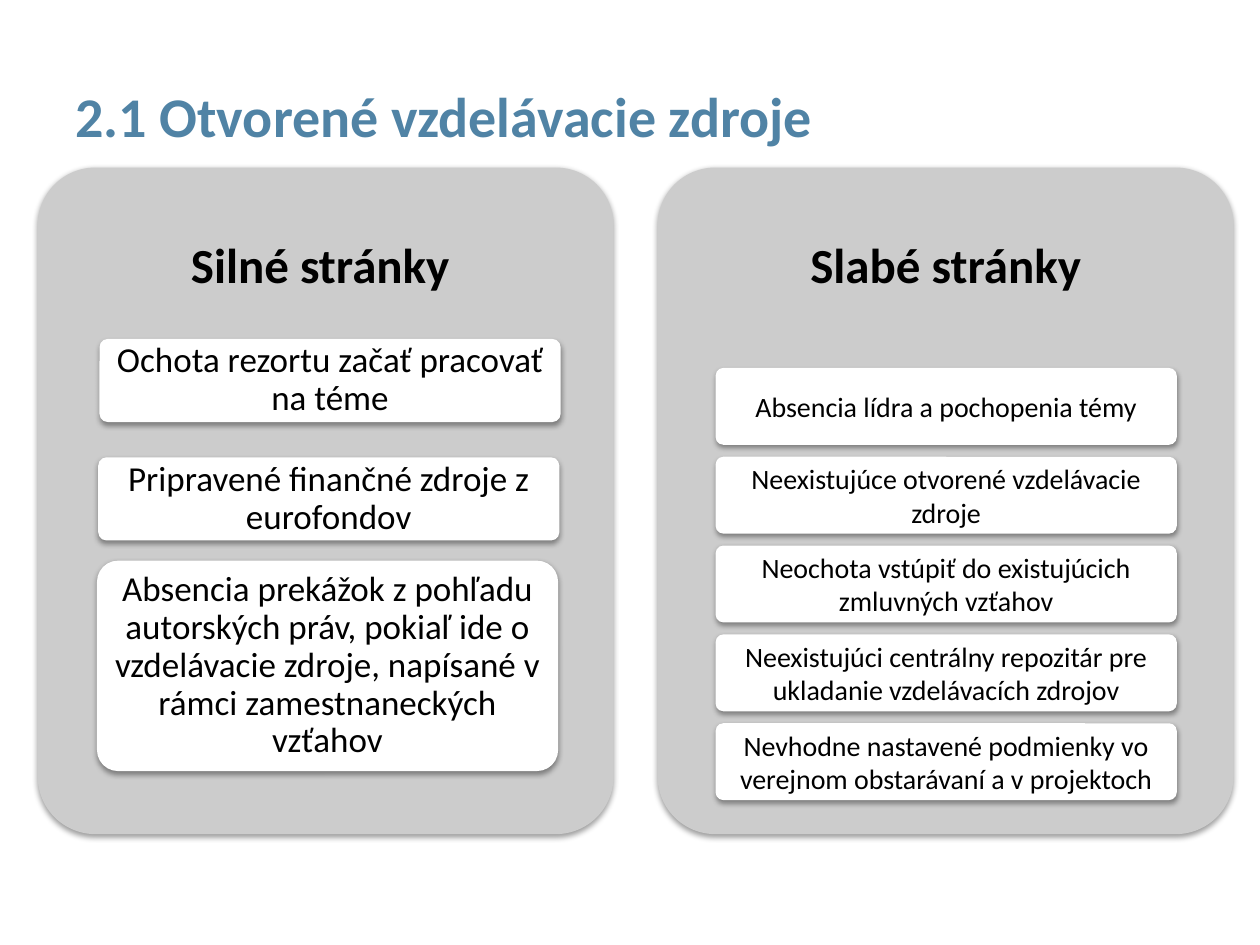
import pptx
import pptx.util
import pptx.dml.color
import pptx.enum.shapes
import pptx.enum.text
import pptx.oxml.ns
import lxml.etree

Inches = pptx.util.Inches
Pt = pptx.util.Pt
RGBColor = pptx.dml.color.RGBColor
ALIGN = pptx.enum.text.PP_ALIGN

BLUE = RGBColor(0x50, 0x83, 0xA5)
GRAY = RGBColor(0xCC, 0xCC, 0xCC)
WHITE = RGBColor(0xFF, 0xFF, 0xFF)
BLACK = RGBColor(0x00, 0x00, 0x00)

PANEL_TOP, PANEL_WIDTH, PANEL_HEIGHT = 1.33, 4.57, 5.29
HEADING_HEIGHT = 1.59
CARD_WIDTH = 3.66

STRENGTHS = [
    (0.49, 1.36, 0.66, "Ochota rezortu začať pracovať na téme"),
    (0.48, 2.30, 0.66, "Pripravené finančné zdroje z eurofondov"),
    (0.47, 3.12, 1.67, "Absencia prekážok z pohľadu autorských práv, pokiaľ ide o "
     "vzdelávacie zdroje, napísané v rámci zamestnaneckých vzťahov"),
]
WEAKNESS_TEXTS = [
    "Absencia lídra a pochopenia témy",
    "Neexistujúce otvorené vzdelávacie zdroje",
    "Neochota vstúpiť do existujúcich zmluvných vzťahov",
    "Neexistujúci centrálny repozitár pre ukladanie vzdelávacích zdrojov",
    "Nevhodne nastavené podmienky vo verejnom obstarávaní a v projektoch",
]
WEAKNESSES = [(0.46, 1.59 + row * 0.705, 0.61, text)
              for row, text in enumerate(WEAKNESS_TEXTS)]


def write_text(holder, text, size, color=BLACK, bold=False, align=ALIGN.CENTER,
               line_spacing=1.0, margin_x=0.1, margin_y=0.05):
    frame = holder.text_frame
    frame.word_wrap = True
    frame.vertical_anchor = pptx.enum.text.MSO_ANCHOR.MIDDLE
    frame.margin_left = frame.margin_right = Inches(margin_x)
    frame.margin_top = frame.margin_bottom = Inches(margin_y)
    paragraph = frame.paragraphs[0]
    paragraph.alignment = align
    paragraph.line_spacing = line_spacing
    run = paragraph.add_run()
    run.text = text
    run.font.name = "Calibri"
    run.font.size = Pt(size)
    run.font.bold = bold
    run.font.color.rgb = color


def add_text(slide, left, top, width, height, text, **text_format):
    box = slide.shapes.add_textbox(
        Inches(left), Inches(top), Inches(width), Inches(height))
    write_text(box, text, **text_format)


def add_shadow(shape):
    qn = pptx.oxml.ns.qn
    shape.shadow.inherit = False
    effects = shape.element.spPr.find(qn("a:effectLst"))
    shadow = lxml.etree.SubElement(
        effects, qn("a:outerShdw"), blurRad=str(Pt(3.1)), dist=str(Pt(1.6)),
        dir="5400000", rotWithShape="0")
    color = lxml.etree.SubElement(shadow, qn("a:srgbClr"), val="000000")
    lxml.etree.SubElement(color, qn("a:alpha"), val="38000")


def add_rounded_box(slide, left, top, width, height, fill):
    box = slide.shapes.add_shape(
        pptx.enum.shapes.MSO_SHAPE.ROUNDED_RECTANGLE,
        Inches(left), Inches(top), Inches(width), Inches(height))
    box.adjustments[0] = 0.1
    box.fill.solid()
    box.fill.fore_color.rgb = fill
    box.line.fill.background()
    add_shadow(box)
    return box


def add_panel(slide, left, top, width, height, heading, cards, **card_format):
    add_rounded_box(slide, left, top, width, height, GRAY)
    add_text(slide, left, top, width, HEADING_HEIGHT, heading, size=28, bold=True,
             line_spacing=0.9, margin_x=0.12, margin_y=0.12)
    for card_left, card_top, card_height, text in cards:
        card = add_rounded_box(
            slide, left + card_left, top + card_top, CARD_WIDTH, card_height, WHITE)
        write_text(card, text, **card_format)


def main():
    presentation = pptx.Presentation()
    presentation.slide_width = Inches(10)
    presentation.slide_height = Inches(7.5)
    slide = presentation.slides.add_slide(presentation.slide_layouts[6])
    add_text(slide, 0.5, 0.33, 9, 1.17, "2.1 Otvorené vzdelávacie zdroje",
             size=32, color=BLUE, bold=True, align=ALIGN.LEFT)
    add_panel(slide, 0.3, PANEL_TOP, PANEL_WIDTH, PANEL_HEIGHT, "Silné stránky ",
              STRENGTHS, size=20, line_spacing=0.9, margin_x=0.06, margin_y=0.04)
    add_panel(slide, 5.22, PANEL_TOP, PANEL_WIDTH, PANEL_HEIGHT, "Slabé stránky",
              WEAKNESSES, size=16, margin_x=0.04, margin_y=0.03)
    presentation.save("out.pptx")


if __name__ == "__main__":
    main()
